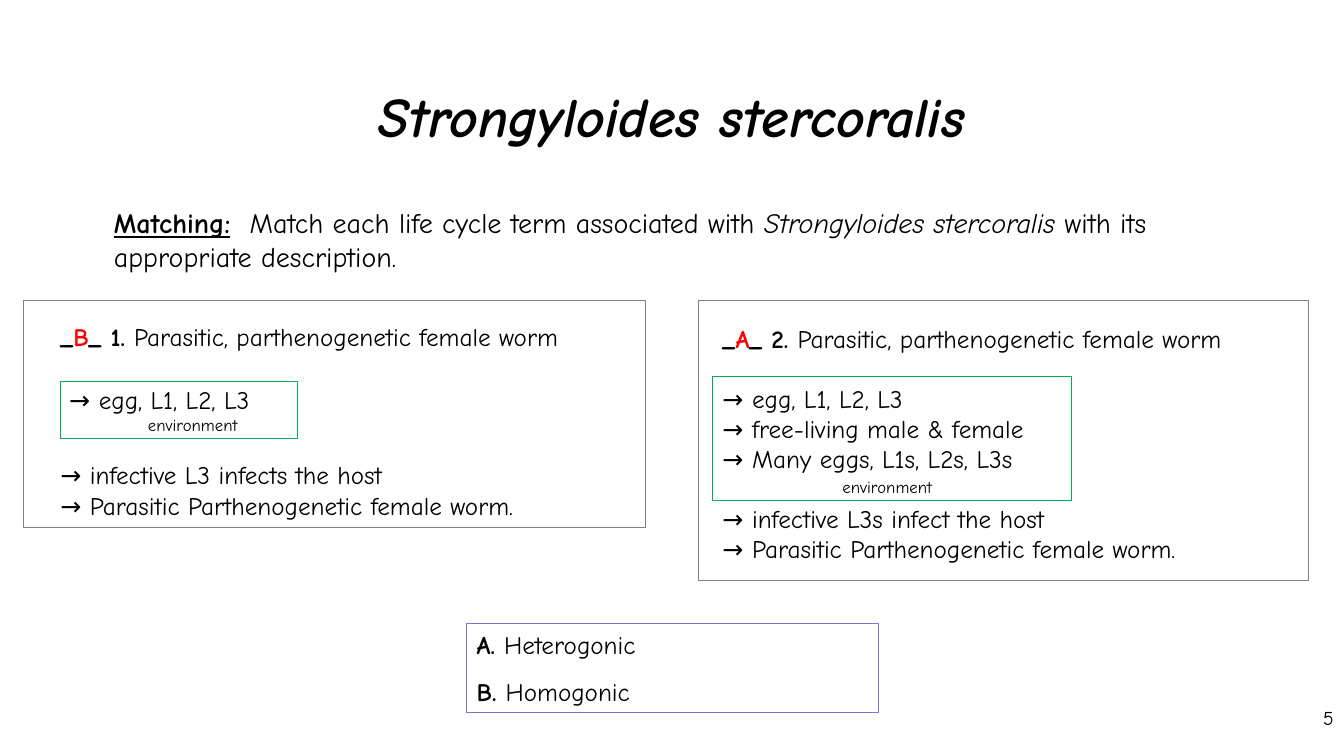
from pptx import Presentation
from pptx.dml.color import RGBColor as Color
from pptx.enum.shapes import MSO_SHAPE as Preset
from pptx.enum.text import MSO_ANCHOR as Anchor, PP_ALIGN as Align
from pptx.oxml.ns import qn
from pptx.util import Pt
from lxml.etree import SubElement

COLORS = {"ink": "000000", "answer": "FF0000", "green": "00B050",
          "gray": "808080", "violet": "7575D1"}
BOLD = {"bold": True}
ITALIC = {"italic": True}
ANSWER = {"bold": True, "color": "answer"}
HANG = 103
TITLE = "Strongyloides stercoralis"


class Slide:
    def __init__(self, deck, font):
        self.font = font
        self.page = deck.slides.add_slide(deck.slide_layouts[5])

    def place(self, shape, area):
        for name, value in zip(("left", "top", "width", "height"), area):
            setattr(shape, name, Pt(value))

    def fill_text(self, frame, lines, size, align=Align.LEFT):
        for number, (spans, layout) in enumerate(lines):
            para = frame.paragraphs[0] if number == 0 else frame.add_paragraph()
            para.alignment = align
            if "before" in layout:
                para.space_before = Pt(layout["before"])
            props = para._p.get_or_add_pPr()
            if "hang" in layout:
                props.set("marL", str(Pt(HANG + layout["hang"])))
                props.set("indent", str(Pt(-HANG)))
            if "tab" in layout:
                stops = SubElement(props, qn("a:tabLst"))
                SubElement(stops, qn("a:tab"), pos=str(Pt(layout["tab"])), algn="l")
            for words, look in spans:
                span = para.add_run()
                span.text = words
                look = {"name": self.font, "size": Pt(size), "color": "ink", **look}
                span.font.color.rgb = Color.from_string(COLORS[look.pop("color")])
                for name, value in look.items():
                    setattr(span.font, name, value)

    def title(self, area, words):
        shape = self.page.shapes.title
        self.place(shape, area)
        shape.text_frame.vertical_anchor = Anchor.MIDDLE
        self.fill_text(shape.text_frame, [([(words, {**BOLD, **ITALIC})], {})], 40, Align.CENTER)

    def text(self, area, lines, size, align=Align.LEFT, wrap=True, parent=None):
        box = (parent or self.page).shapes.add_textbox(*map(Pt, area))
        box.text_frame.word_wrap = wrap
        self.fill_text(box.text_frame, lines, size, align)

    def frame(self, area, color, parent=None):
        shape = (parent or self.page).shapes.add_shape(Preset.RECTANGLE, *map(Pt, area))
        shape.shadow.inherit = False
        shape.fill.background()
        shape.line.color.rgb = Color.from_string(COLORS[color])
        shape.line.width = Pt(0.75)

    def cycle(self, answer, number, steps, text_area, note_area, inner, outer):
        group = self.page.shapes.add_group_shape()
        heading = [("_", BOLD), (answer, ANSWER), (f"_ {number}. ", BOLD),
                   ("Parasitic, parthenogenetic female worm", {})]
        lines = [(heading, {"hang": 0})]
        for words, layout in steps:
            lines.append(([("→ " + words, {})], {"hang": 0, **layout}))
        self.text(text_area, lines, 18, parent=group)
        self.text(note_area, [([("environment", {})], {})], 12, wrap=False, parent=group)
        self.frame(inner, "green", group)
        self.frame(outer, "gray", group)


def main():
    deck = Presentation()
    deck.slide_width, deck.slide_height = Pt(960), Pt(540)
    slide = Slide(deck, "Comic Neue")
    slide.title((48, 50.4, 864, 64), TITLE)

    choices_area = (333.4, 445.7, 293.8, 63.4)
    slide.frame(choices_area, "violet")
    slide.text(choices_area, [
        ([("A. ", BOLD), ("Heterogonic", {})], {}),
        ([("B. ", BOLD), ("Homogonic", {})], {"before": 12}),
    ], 18)

    slide.text((74.2, 143.3, 778.3, 49.7), [([
        ("Matching:", {"bold": True, "underline": True}),
        ("\tMatch each life cycle term associated with ", {}),
        (TITLE, ITALIC),
        (" with its appropriate description.", {}),
    ], {"tab": 97})], 20)
    slide.text((923.8, 500.4, 36, 37.4), [([("5", {})], {})], 14, Align.RIGHT)

    slide.cycle("B", 1, [
        ("egg, L1, L2, L3", {"before": 23, "hang": 6.4}),
        ("infective L3 infects the host", {"before": 32.5}),
        ("Parasitic Parthenogenetic female worm.", {}),
    ], (36, 226.1, 424.8, 151.2), (98.6, 293, 83.5, 21.6),
        (43.2, 272.2, 169.2, 41), (16.6, 214.6, 444.2, 162))

    slide.cycle("A", 2, [
        ("egg, L1, L2, L3", {"before": 21}),
        ("free-living male & female", {}),
        ("Many eggs, L1s, L2s, L3s", {}),
        ("infective L3s infect the host", {"before": 21}),
        ("Parasitic Parthenogenetic female worm.", {}),
    ], (509, 227.5, 426.2, 178.6), (594.7, 337, 83.5, 21.6),
        (509, 268.6, 256.3, 88.6), (499, 214.6, 435.6, 200.2))

    deck.save("out.pptx")


if __name__ == "__main__":
    main()
